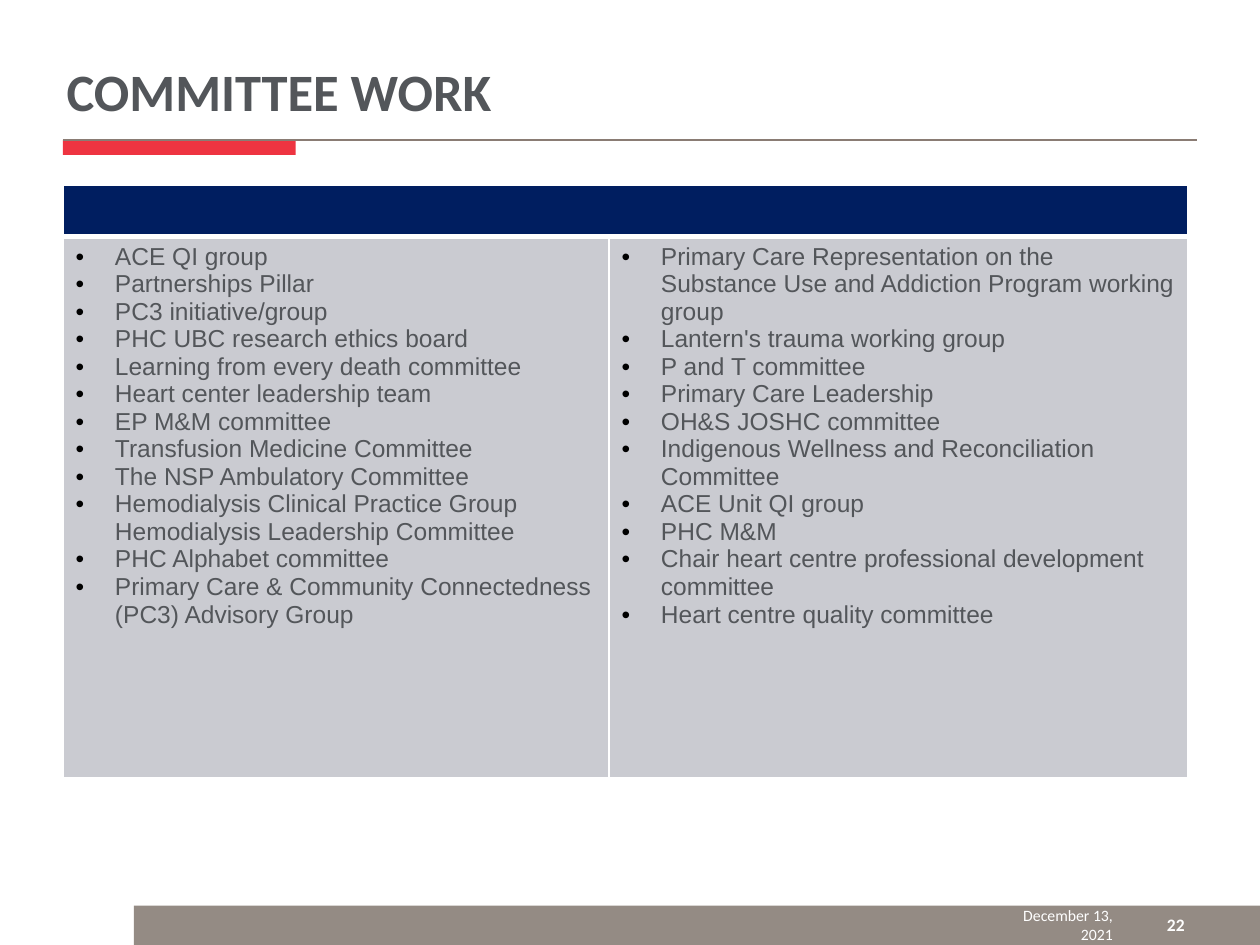
import lxml.etree
import pptx
import pptx.dml.color
import pptx.enum.shapes
import pptx.enum.text
import pptx.oxml.ns
import pptx.util

Pt = pptx.util.Pt
RGBColor = pptx.dml.color.RGBColor
qn = pptx.oxml.ns.qn
ALIGN = pptx.enum.text.PP_ALIGN
ANCHOR = pptx.enum.text.MSO_ANCHOR

GREY = RGBColor(0x53, 0x56, 0x5A)
TAUPE = RGBColor(0x94, 0x8B, 0x84)
RULE = RGBColor(0x8A, 0x7C, 0x74)
RED = RGBColor(0xEE, 0x34, 0x41)
NAVY = RGBColor(0x00, 0x1E, 0x60)
PALE = RGBColor(0xCA, 0xCB, 0xD1)
WHITE = RGBColor(0xFF, 0xFF, 0xFF)
BLACK = RGBColor(0x00, 0x00, 0x00)

COMMITTEES = [
    [
        "ACE QI group",
        "Partnerships Pillar",
        "PC3 initiative/group",
        "PHC UBC research ethics board",
        "Learning from every death committee",
        "Heart center leadership team",
        "EP M&M committee",
        "Transfusion Medicine Committee",
        "The NSP Ambulatory Committee",
        "Hemodialysis Clinical Practice Group Hemodialysis Leadership Committee",
        "PHC Alphabet committee",
        "Primary Care & Community Connectedness (PC3) Advisory Group",
    ],
    [
        "Primary Care Representation on the Substance Use and Addiction Program working group",
        "Lantern's trauma working group",
        "P and T committee",
        "Primary Care Leadership",
        "OH&S JOSHC committee",
        "Indigenous Wellness and Reconciliation Committee",
        "ACE Unit QI group",
        "PHC M&M",
        "Chair heart centre professional development committee",
        "Heart centre quality committee",
    ],
]


def style_font(font, name, size, color, bold=False):
    font.name = name
    font.size = Pt(size)
    font.color.rgb = color
    font.bold = bold


def style_cell(cell, fill_color, bottom_width=1):
    cell.fill.solid()
    cell.fill.fore_color.rgb = fill_color
    properties = cell._tc.get_or_add_tcPr()
    widths = {"a:lnL": 1, "a:lnR": 1, "a:lnT": 1, "a:lnB": bottom_width}
    # Borders must come before the fill
    for position, (tag, width) in enumerate(widths.items()):
        border = lxml.etree.Element(qn(tag), w=str(Pt(width)))
        fill = lxml.etree.SubElement(border, qn("a:solidFill"))
        lxml.etree.SubElement(fill, qn("a:srgbClr"), val=str(WHITE))
        properties.insert(position, border)


presentation = pptx.Presentation()
presentation.slide_width = Pt(720)
presentation.slide_height = Pt(540)
slide = presentation.slides.add_slide(presentation.slide_layouts[5])

# Footer band and red accent
for left, top, width, height, color in [
    (76.5, 517.5, 643.5, 22.5, TAUPE),
    (36, 80, 133, 8.5, RED),
]:
    shape = slide.shapes.add_shape(
        pptx.enum.shapes.MSO_SHAPE.RECTANGLE, Pt(left), Pt(top), Pt(width), Pt(height)
    )
    shape.shadow.inherit = False
    shape.fill.solid()
    shape.fill.fore_color.rgb = color
    shape.line.fill.background()

# Rule under the title
rule = slide.shapes.add_connector(
    pptx.enum.shapes.MSO_CONNECTOR.STRAIGHT, Pt(36), Pt(80), Pt(684), Pt(80)
)
rule.line.color.rgb = RULE
rule.line.width = Pt(1)
lxml.etree.SubElement(rule._element.spPr, qn("a:effectLst"))

# Title
title = slide.shapes.title
title.left, title.top, title.width, title.height = Pt(38), Pt(15), Pt(621), Pt(58.5)
text_frame = title.text_frame
text_frame.text = "COMMITTEE WORK"
text_frame.word_wrap = True
text_frame.vertical_anchor = ANCHOR.BOTTOM
text_frame.margin_left = 0
text_frame.margin_right = Pt(9)
text_frame.margin_top = text_frame.margin_bottom = Pt(3.6)
text_frame.paragraphs[0].alignment = ALIGN.LEFT
style_font(text_frame.paragraphs[0].runs[0].font, "Calibri", 30, GREY, True)

# Committee table
table = slide.shapes.add_table(2, 2, Pt(36), Pt(106), Pt(643), Pt(338.5)).table
table.columns[0].width, table.columns[1].width = Pt(312), Pt(331)
table.rows[0].height, table.rows[1].height = Pt(29), Pt(309.5)
table.cell(0, 0).merge(table.cell(0, 1))
for cell in table.rows[0].cells:
    style_cell(cell, NAVY, bottom_width=3)

for cell, names in zip(table.rows[1].cells, COMMITTEES):
    style_cell(cell, PALE)
    cell.text_frame.text = "\n".join(names)
    for paragraph in cell.text_frame.paragraphs:
        properties = paragraph._p.get_or_add_pPr()
        properties.set("marL", str(Pt(22.5)))
        properties.set("indent", str(Pt(-22.5)))
        bullet_color = lxml.etree.SubElement(properties, qn("a:buClr"))
        lxml.etree.SubElement(bullet_color, qn("a:srgbClr"), val=str(BLACK))
        lxml.etree.SubElement(properties, qn("a:buFont"), typeface="Arial")
        lxml.etree.SubElement(properties, qn("a:buChar"), char="•")
        style_font(paragraph.runs[0].font, "Arial", 14, GREY)

# Date and slide number
for text, left, width, size, bold in [
    ("December 13, 2021", 570, 73, 9, False),
    ("22", 650, 34, 10, True),
]:
    text_box = slide.shapes.add_textbox(Pt(left), Pt(514), Pt(width), Pt(29))
    text_frame = text_box.text_frame
    text_frame.text = text
    text_frame.word_wrap = True
    text_frame.vertical_anchor = ANCHOR.MIDDLE
    text_frame.paragraphs[0].alignment = ALIGN.RIGHT
    style_font(text_frame.paragraphs[0].runs[0].font, "Calibri", size, WHITE, bold)

presentation.save("out.pptx")
